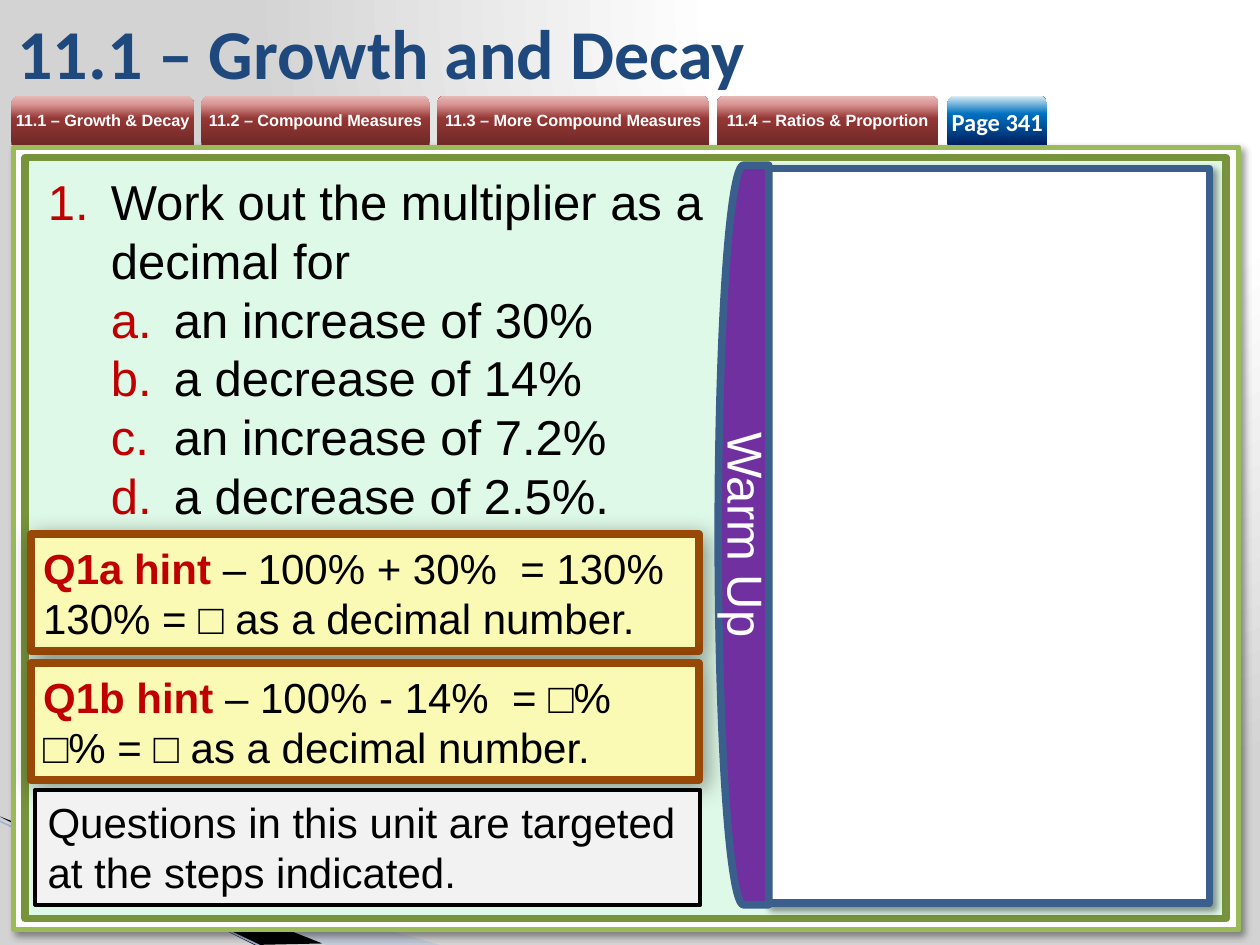
from pptx import Presentation
from pptx.dml.color import RGBColor
from pptx.enum.shapes import MSO_CONNECTOR, MSO_SHAPE as SHAPE
from pptx.enum.text import MSO_ANCHOR, MSO_AUTO_SIZE, PP_ALIGN
from pptx.oxml import parse_xml
from pptx.oxml.ns import qn
from pptx.util import Cm, Pt
from lxml.etree import SubElement

COLORS = {
    "white": "FFFFFF", "black": "000000", "gray": "D3D3D3", "note": "F2F2F2",
    "title": "1F497D", "red": "C00000", "lime": "9BBB59", "olive": "77933C",
    "mint": "DFF9E8", "blue": "3A5F8C", "purple": "7030A0", "yellow": "FAFAB4",
    "brown": "984807", "swoosh": "A7B9DB", "edge": "9EB3D6",
}
RED_STOPS = [(0, "6F2927"), (54, "953735"), (83, "D99694"), (100, "E6B9B8")]
BLUE_STOPS = [(0, "002060"), (63, "0070C0"), (100, "DBEEF4")]
PAGE_STOPS = [(0, COLORS["white"]), (40, COLORS["white"]), (100, COLORS["gray"])]
UPWARD = '<a:lin ang="16200000" scaled="0"/>'
CORNER = '<a:path path="circle"><a:fillToRect l="65000" t="0" r="0" b="98000"/></a:path>'

TITLE = "11.1 – Growth and Decay"
TABS = [
    ("11.1 – Growth & Decay", 3.68),
    ("11.2 – Compound Measures", 4.6),
    ("11.3 – More Compound Measures", 5.49),
    ("11.4 – Ratios & Proportion", 4.47),
]
TAB_LEFT, TAB_TOP, TAB_HEIGHT, TAB_GAP = 0.23, 1.93, 0.99, 0.15
PAGE = ("Page 341", 19.1, 2.01)
QUESTION = [
    (0, "Work out the multiplier as a decimal for"),
    (1, "an increase of 30%"),
    (1, "a decrease of 14%"),
    (1, "an increase of 7.2%"),
    (1, "a decrease of 2.5%."),
]
NUMBERING = ["arabicPeriod", "alphaLcPeriod"]
HINTS = [
    ("Q1a hint ", "– 100% + 30%  = 130%", "130% = □ as a decimal number."),
    ("Q1b hint ", "– 100% - 14%  = □%", "□% = □ as a decimal number."),
]
HINT_TOP, HINT_STEP = 10.77, 2.6
NOTE = "Questions in this unit are targeted at the steps indicated."
SWOOSHES = [
    ("swoosh", 40, [(-0.03, 16.5), (8.87, 19.05), (6.58, 19.05), (-0.03, 16.48)]),
    ("black", 100, [(0, 16.46), (6.5, 19.02), (5.13, 19.05), (0.03, 16.48)]),
]
PANELS = [
    ((0.28, 2.97, 24.69, 15.77), "white", "lime", 3, 4),
    ((0.51, 3.18, 24.21, 15.34), "mint", "olive", 4.33, None),
    ((15.49, 3.4, 8.89, 14.81), "white", "blue", 4.33, 4),
]


def rgb(name):
    return RGBColor.from_string(COLORS[name])


def gradient(stops, direction):
    gs = "".join(f'<a:gs pos="{pos * 1000}"><a:srgbClr val="{c}"/></a:gs>' for pos, c in stops)
    return parse_xml(
        '<a:gradFill xmlns:a="http://schemas.openxmlformats.org/drawingml/2006/main" '
        f'rotWithShape="1"><a:gsLst>{gs}</a:gsLst>{direction}</a:gradFill>')


def paint(sp, fill, line=None, width=0, blur=None):
    sp.fill.solid()
    sp.fill.fore_color.rgb = rgb(fill)
    if line:
        sp.line.color.rgb = rgb(line)
        sp.line.width = Pt(width)
    else:
        sp.line.fill.background()
    sp.shadow.inherit = False
    if blur:
        effects = sp.element.spPr.find(qn("a:effectLst"))
        shadow = SubElement(effects, qn("a:outerShdw"), blurRad=str(Pt(blur)),
                            dist=str(Pt(3)), dir="2700000", algn="tl", rotWithShape="0")
        color = SubElement(shadow, qn("a:srgbClr"), val=COLORS["black"])
        SubElement(color, qn("a:alpha"), val="40000")


def add_box(s, kind, box, *style):
    sp = s.shapes.add_shape(kind, *map(Cm, box))
    paint(sp, *style)
    sp.text_frame.word_wrap = True
    return sp


def add_run(p, text, size, color="black", bold=False, name="Arial"):
    r = p.add_run()
    r.text = text
    r.font.size = Pt(size)
    r.font.bold = bold
    r.font.name = name
    r.font.color.rgb = rgb(color)


def add_tab(s, text, left, width, stops, size, name):
    sp = add_box(s, SHAPE.ROUND_2_SAME_RECTANGLE, (left, TAB_TOP, width, TAB_HEIGHT), "white")
    solid = sp.element.spPr.find(qn("a:solidFill"))
    solid.getparent().replace(solid, gradient(stops, UPWARD))
    tf = sp.text_frame
    tf.margin_left = tf.margin_right = tf.margin_top = tf.margin_bottom = 0
    tf.vertical_anchor = MSO_ANCHOR.MIDDLE
    p = tf.paragraphs[0]
    p.alignment = PP_ALIGN.CENTER
    add_run(p, text, size, "white", True, name)
    return p


def set_background(s):
    s.background.fill.solid()
    solid = next(s.element.cSld.iter(qn("a:solidFill")))
    solid.getparent().replace(solid, gradient(PAGE_STOPS, CORNER))


def add_swooshes(s):
    for fill, opacity, points in SWOOSHES:
        (x, y), *rest = [(Cm(px), Cm(py)) for px, py in points]
        builder = s.shapes.build_freeform(x, y)
        builder.add_line_segments(rest)
        sp = builder.convert_to_shape()
        paint(sp, fill)
        if opacity < 100:
            color = next(sp.element.spPr.iter(qn("a:srgbClr")))
            SubElement(color, qn("a:alpha"), val=str(opacity * 1000))
    edge = s.shapes.add_connector(MSO_CONNECTOR.STRAIGHT, *map(Cm, (-0.03, 16.54, 5.31, 19.1)))
    edge.line.color.rgb = rgb("edge")
    edge.line.width = Pt(0.95)
    SubElement(edge.element.spPr, qn("a:effectLst"))


def place(sp, box):
    sp.left, sp.top, sp.width, sp.height = map(Cm, box)
    sp.element.getparent().append(sp.element)
    sp.text_frame.word_wrap = True
    sp.text_frame.auto_size = MSO_AUTO_SIZE.NONE
    return sp.text_frame


def fill_question(body):
    tf = place(body, (0.71, 3.33, 14.6, 7.44))
    tf.vertical_anchor = MSO_ANCHOR.TOP
    for i, (level, text) in enumerate(QUESTION):
        p = tf.paragraphs[0] if i == 0 else tf.add_paragraph()
        p.level = level
        p.space_before = Pt(0)
        pPr = p._p.get_or_add_pPr()
        pPr.set("marL", str(Cm(1.27 * (level + 1))))
        pPr.set("indent", str(Cm(-1.27)))
        color = SubElement(pPr, qn("a:buClr"))
        SubElement(color, qn("a:srgbClr"), val=COLORS["red"])
        SubElement(pPr, qn("a:buFont"), typeface="Arial")
        SubElement(pPr, qn("a:buAutoNum"), type=NUMBERING[level])
        tabs = SubElement(pPr, qn("a:tabLst"))
        for stop in (3, 7.62):
            SubElement(tabs, qn("a:tab"), pos=str(Cm(stop)), algn="l")
        add_run(p, text, 28)


def main():
    prs = Presentation()
    prs.slide_width, prs.slide_height = Cm(25.4), Cm(19.05)
    s = prs.slides.add_slide(prs.slide_layouts[1])
    set_background(s)
    add_swooshes(s)
    for box, *style in PANELS:
        add_box(s, SHAPE.RECTANGLE, box, *style)

    left = TAB_LEFT
    for text, width in TABS:
        add_tab(s, text, left, width, RED_STOPS, 9.3, "Arial").line_spacing = Pt(10)
        left += width + TAB_GAP
    add_tab(s, *PAGE, BLUE_STOPS, 14, "Calibri")

    tf = place(s.shapes.title, (0.1, 0.13, 21, 1.8))
    tf.vertical_anchor = MSO_ANCHOR.MIDDLE
    tf.paragraphs[0].alignment = PP_ALIGN.LEFT
    add_run(tf.paragraphs[0], TITLE, 40, "title", True, "Calibri")
    fill_question(s.placeholders[1])

    for i, (label, sum_text, answer) in enumerate(HINTS):
        box = (0.62, HINT_TOP + i * HINT_STEP, 13.47, 2.36)
        tf = add_box(s, SHAPE.RECTANGLE, box, "yellow", "brown", 4.33, 13).text_frame
        tf.vertical_anchor = MSO_ANCHOR.MIDDLE
        first, second = tf.paragraphs[0], tf.add_paragraph()
        first.alignment = second.alignment = PP_ALIGN.LEFT
        add_run(first, label, 24, "red", True)
        add_run(first, sum_text, 24)
        add_run(second, answer, 24)

    sp = add_box(s, SHAPE.FLOWCHART_DELAY, (14.48, 3.33, 1.02, 14.91), "purple", "blue", 4.33)
    sp.element.spPr.find(qn("a:xfrm")).set("flipH", "1")
    tf = sp.text_frame
    tf._txBody.bodyPr.set("vert", "vert")
    tf.vertical_anchor = MSO_ANCHOR.MIDDLE
    tf.paragraphs[0].alignment = PP_ALIGN.CENTER
    add_run(tf.paragraphs[0], "Warm Up", 28, "white")

    tf = add_box(s, SHAPE.RECTANGLE, (0.71, 15.93, 13.41, 2.31), "note", "black", 2.25).text_frame
    tf.vertical_anchor = MSO_ANCHOR.TOP
    tf.paragraphs[0].alignment = PP_ALIGN.LEFT
    add_run(tf.paragraphs[0], NOTE, 24)
    prs.save("out.pptx")


if __name__ == "__main__":
    main()
